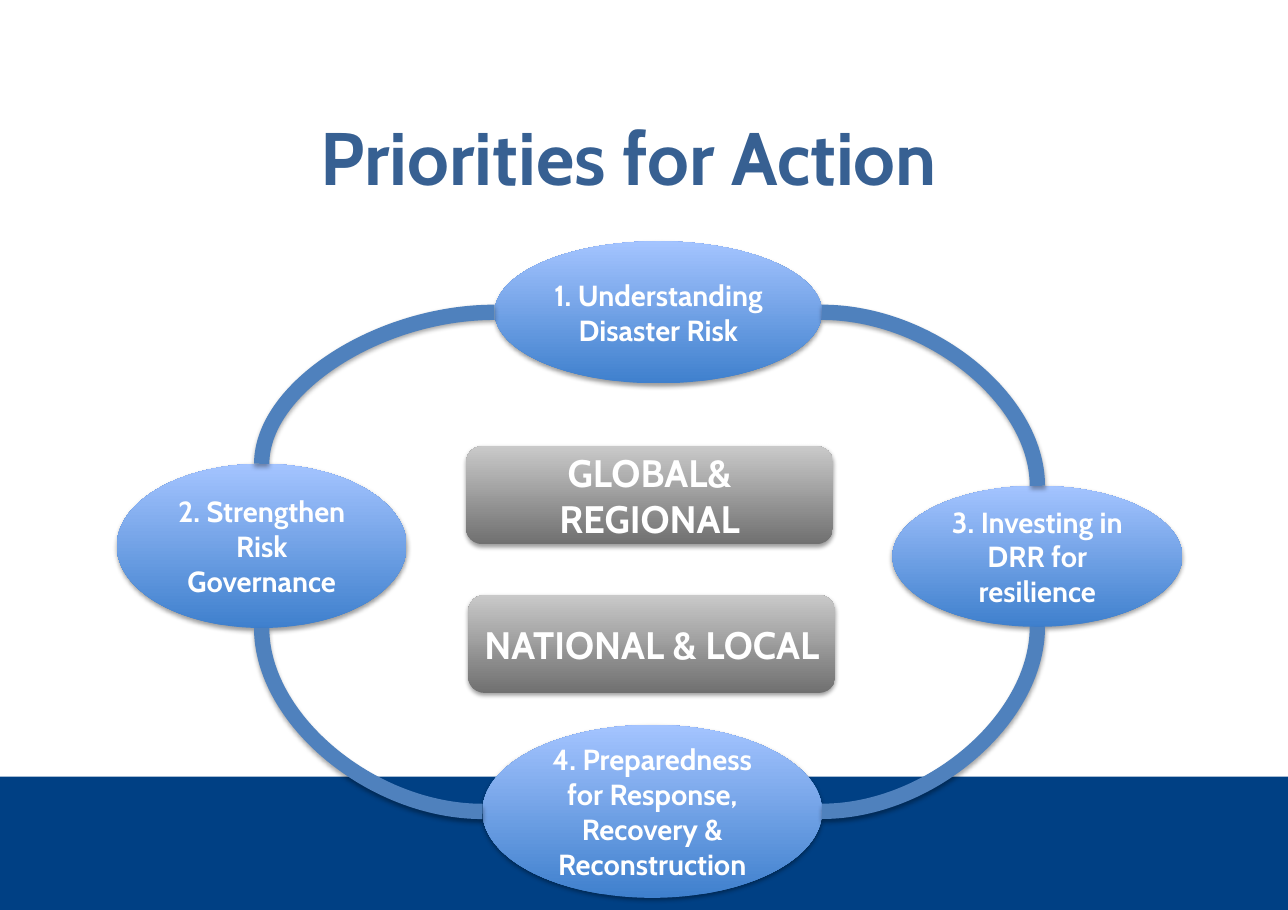
from lxml.etree import SubElement
from pptx import Presentation
from pptx.dml.color import RGBColor
from pptx.enum.shapes import MSO_CONNECTOR, MSO_SHAPE
from pptx.enum.text import MSO_ANCHOR, PP_ALIGN
from pptx.oxml.ns import qn
from pptx.util import Inches, Pt

WIDTH, HEIGHT = Inches(11.69), Inches(8.26)
FONT = "Cabin"
BLUES = ("3F80CD", "A4C4FF")
GREYS = ("707070", "C9C9C9")


def rgb(value):
    return RGBColor.from_string(value)


def place(left, top, width, height):
    return (round(WIDTH * left / 100), round(HEIGHT * top / 100),
            round(WIDTH * width / 100), round(HEIGHT * height / 100))


def add_shadow(sp, opacity, distance):
    props = sp._element.spPr
    for old in props.findall(qn("a:effectLst")):
        props.remove(old)
    effects = SubElement(props, qn("a:effectLst"))
    shadow = SubElement(effects, qn("a:outerShdw"), blurRad=str(Pt(3)),
                        dist=str(Pt(distance)), dir="5400000", rotWithShape="0")
    color = SubElement(shadow, qn("a:srgbClr"), val="000000")
    SubElement(color, qn("a:alpha"), val=str(opacity * 1000))


def write(sp, text, size, color, align):
    tf = sp.text_frame
    tf.word_wrap = True
    tf.vertical_anchor = MSO_ANCHOR.MIDDLE
    p = tf.paragraphs[0]
    p.alignment = align
    r = p.add_run()
    r.text = text
    r.font.name, r.font.size, r.font.bold = FONT, Pt(size), True
    r.font.color.rgb = rgb(color)
    return tf


def add_band(s, box, color):
    sp = s.shapes.add_shape(MSO_SHAPE.RECTANGLE, *place(*box))
    sp.shadow.inherit = False
    sp.fill.solid()
    sp.fill.fore_color.rgb = rgb(color)
    sp.line.fill.background()


def add_title(s, box, text):
    sp = s.shapes.add_textbox(*place(*box))
    tf = write(sp, text, 48.6, "376092", PP_ALIGN.LEFT)
    tf.margin_left = tf.margin_right = Inches(0.06)
    tf.margin_top = tf.margin_bottom = Inches(0.06)


def add_node(s, kind, box, text, size, colors):
    sp = s.shapes.add_shape(kind, *place(*box))
    sp.fill.gradient()
    sp.fill.gradient_angle = 90
    for stop, color in zip(sp.fill.gradient_stops, colors):
        stop.color.rgb = rgb(color)
    sp.line.fill.background()
    add_shadow(sp, 38, 1.6)
    write(sp, text, size, "FFFFFF", PP_ALIGN.CENTER)
    return sp


def add_arc(s, pole, side):
    pole_x = pole.left + pole.width // 2
    side_x = side.left + side.width // 2
    pole_y = pole.top + pole.height // 2
    side_y = side.top + side.height // 2
    start_x = pole.left if side_x < pole_x else pole.left + pole.width
    end_y = side.top if pole_y < side_y else side.top + side.height
    arc = s.shapes.add_connector(MSO_CONNECTOR.CURVE, start_x, pole_y, side_x, end_y)
    arc._element.spPr.find(qn("a:prstGeom")).set("prst", "curvedConnector2")
    arc.line.color.rgb = rgb("4F81BD")
    arc.line.width = Pt(10)
    add_shadow(arc, 35, 1.8)


def main():
    prs = Presentation()
    prs.slide_width, prs.slide_height = WIDTH, HEIGHT
    s = prs.slides.add_slide(prs.slide_layouts[6])

    add_band(s, (0, 85.35, 100, 14.65), "004084")
    add_title(s, (24.38, 11.86, 70.66, 10.53), "Priorities for Action")

    priorities = [
        ((38.41, 26.51, 25.41, 15.62), "1. Understanding Disaster Risk"),
        ((9.07, 50.97, 22.5, 18.04), "2. Strengthen Risk Governance"),
        ((37.47, 79.66, 26.35, 19.01),
         "4. Preparedness for Response, Recovery & Reconstruction"),
        ((69.29, 53.39, 22.5, 15.5), "3. Investing in DRR for resilience"),
    ]
    top, left, bottom, right = [
        add_node(s, MSO_SHAPE.OVAL, box, text, 19, BLUES)
        for box, text in priorities]
    for pole in (top, bottom):
        for side in (left, right):
            add_arc(s, pole, side)

    levels = [(36.18, 49.03, "GLOBAL& REGIONAL"), (36.36, 65.38, "NATIONAL & LOCAL")]
    for x, y, text in levels:
        sp = add_node(s, MSO_SHAPE.ROUNDED_RECTANGLE, (x, y, 28.49, 10.77),
                      text, 25, GREYS)
        sp.text_frame.margin_left = sp.text_frame.margin_right = Inches(0.09)
        sp.text_frame.margin_top = sp.text_frame.margin_bottom = Inches(0.04)

    prs.save("out.pptx")


if __name__ == "__main__":
    main()
